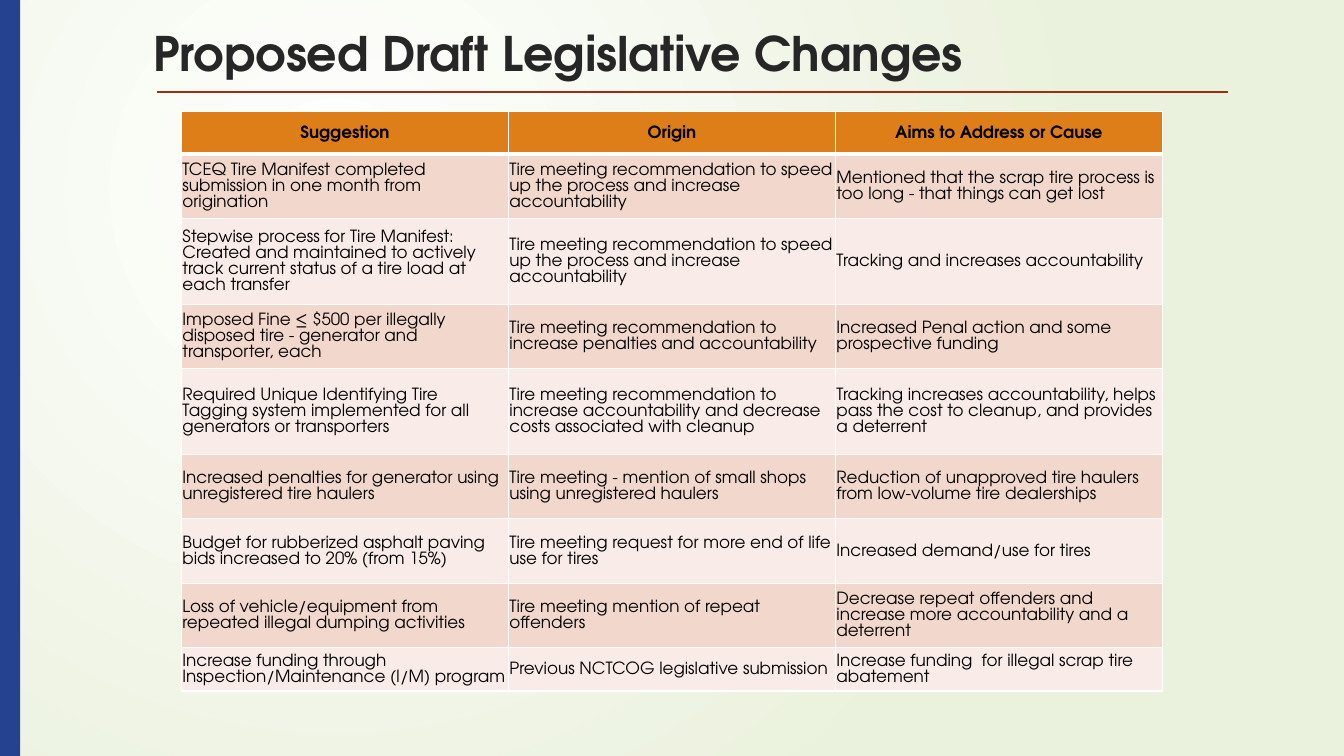
from lxml import etree
from pptx import Presentation
from pptx import util as u
from pptx.dml.color import RGBColor
from pptx.enum import shapes, text
from pptx.oxml.ns import qn

WHITE = RGBColor(0xFF, 0xFF, 0xFF)
PALE_GREEN = RGBColor(0xEA, 0xF1, 0xDC)
BLUE = RGBColor(0x24, 0x42, 0x8F)
RUST = RGBColor(0x9E, 0x2E, 0x0F)
ORANGE = RGBColor(0xDE, 0x7E, 0x18)
BANDS = (RGBColor(0xF2, 0xD8, 0xCC), RGBColor(0xF9, 0xEC, 0xE8))
CHARCOAL = RGBColor(0x26, 0x26, 0x26)
BLACK = RGBColor(0, 0, 0)

SPEED_UP = "Tire meeting recommendation to speed up the process and increase accountability"
HEADINGS = ("Suggestion", "Origin", "Aims to Address or Cause")
CHANGES = [
    ("TCEQ Tire Manifest completed submission in one month from origination",
     SPEED_UP,
     "Mentioned that the scrap tire process is too long - that things can get lost"),
    ("Stepwise process for Tire Manifest: Created and maintained to actively "
     "track current status of a tire load at each transfer",
     SPEED_UP,
     "Tracking and increases accountability"),
    ("Imposed Fine ≤ $500 per illegally disposed tire - generator and transporter, each",
     "Tire meeting recommendation to increase penalties and accountability",
     "Increased Penal action and some prospective funding"),
    ("Required Unique Identifying Tire Tagging system implemented for all "
     "generators or transporters",
     "Tire meeting recommendation to increase accountability and decrease "
     "costs associated with cleanup",
     "Tracking increases accountability, helps pass the cost to cleanup, "
     "and provides a deterrent"),
    ("Increased penalties for generator using unregistered tire haulers",
     "Tire meeting - mention of small shops using unregistered haulers",
     "Reduction of unapproved tire haulers from low-volume tire dealerships"),
    ("Budget for rubberized asphalt paving bids increased to 20% (from 15%)",
     "Tire meeting request for more end of life use for tires",
     "Increased demand/use for tires"),
    ("Loss of vehicle/equipment from repeated illegal dumping activities",
     "Tire meeting mention of repeat offenders",
     "Decrease repeat offenders and increase more accountability and a deterrent"),
    ("Increase funding through Inspection/Maintenance (I/M) program",
     "Previous NCTCOG legislative submission",
     "Increase funding  for illegal scrap tire abatement"),
]
SHORT, TALL = 8.53, 11.33
ROW_HEIGHTS = [5.6, SHORT, TALL, SHORT, TALL, SHORT, SHORT, SHORT, 5.73]


class SlideBuilder:
    """Places elements on a grid of 100 columns by 100 rows."""

    FONT = "TeX Gyre Adventor"

    def __init__(self, deck):
        self.col = deck.slide_width / 100
        self.row = deck.slide_height / 100
        self.slide = deck.slides.add_slide(deck.slide_layouts[6])

    def place(self, x, y, across, down):
        return (u.Emu(round(x * self.col)), u.Emu(round(y * self.row)),
                u.Emu(round(across * self.col)), u.Emu(round(down * self.row)))

    def set_words(self, frame, words, size, color, bold=False):
        frame.word_wrap = True
        frame.text = words
        paragraph = frame.paragraphs[0]
        font = paragraph.runs[0].font
        font.name, font.size, font.bold = self.FONT, u.Pt(size), bold
        font.color.rgb = color
        return paragraph

    def background(self, inner, outer):
        """Radial gradient centred in the upper left quarter."""
        fill = self.slide.background.fill
        fill.gradient()
        for stop, color, position in zip(fill.gradient_stops, (inner, outer), (0, 1)):
            stop.color.rgb, stop.position = color, position
        gradient = self.slide.element.find(".//" + qn("a:gradFill"))
        gradient.remove(gradient.find(qn("a:lin")))
        circle = etree.SubElement(gradient, qn("a:path"), path="circle")
        etree.SubElement(circle, qn("a:fillToRect"),
                         l="50000", t="50000", r="100000", b="100000")

    def bar(self, x, y, across, down, color):
        bar = self.slide.shapes.add_shape(
            shapes.MSO_SHAPE.RECTANGLE, *self.place(x, y, across, down))
        bar.shadow.inherit = False
        bar.fill.solid()
        bar.fill.fore_color.rgb = color
        bar.line.fill.background()

    def title(self, x, y, across, down, words):
        box = self.slide.shapes.add_textbox(*self.place(x, y, across, down))
        box.text_frame.vertical_anchor = text.MSO_ANCHOR.TOP
        self.set_words(box.text_frame, words, 34, CHARCOAL, bold=True)

    def rule(self, x, y, across, color):
        left, top, width, _ = self.place(x, y, across, 0)
        rule = self.slide.shapes.add_connector(
            shapes.MSO_CONNECTOR.STRAIGHT, left, top, left + width, top)
        rule.line.color.rgb, rule.line.width = color, u.Pt(1.5)
        etree.SubElement(rule._element.spPr, qn("a:effectLst"))

    def borders(self, cell, top, bottom):
        """White cell edges; top and bottom are widths in points."""
        properties = cell._tc.get_or_add_tcPr()
        edges = {"lnL": 1, "lnR": 1, "lnT": top, "lnB": bottom}
        for place, (edge, width) in enumerate(edges.items()):
            line = etree.Element(qn("a:" + edge), w=str(int(u.Pt(width))))
            solid = etree.SubElement(line, qn("a:solidFill"))
            etree.SubElement(solid, qn("a:srgbClr"), val=str(WHITE))
            properties.insert(place, line)

    def cell(self, cell, words, fill, heading):
        cell.fill.solid()
        cell.fill.fore_color.rgb = fill
        cell.vertical_anchor = text.MSO_ANCHOR.MIDDLE
        cell.margin_left = cell.margin_right = cell.margin_top = u.Inches(0.01)
        cell.margin_bottom = 0
        paragraph = self.set_words(cell.text_frame, words, 12, BLACK, bold=heading)
        paragraph.line_spacing = u.Pt(11.4)
        paragraph.alignment = text.PP_ALIGN.CENTER if heading else text.PP_ALIGN.LEFT

    def table(self, x, y, across, heights, rows):
        table = self.slide.shapes.add_table(
            len(rows), len(rows[0]), *self.place(x, y, across, sum(heights))).table
        for column in table.columns:
            column.width = u.Emu(round(across * self.col / len(rows[0])))
        for r, (height, row) in enumerate(zip(heights, rows)):
            table.rows[r].height = u.Emu(round(height * self.row))
            fill = BANDS[(r - 1) % 2] if r else ORANGE
            for c, words in enumerate(row):
                self.cell(table.cell(r, c), words, fill, heading=r == 0)
                self.borders(table.cell(r, c), top=3 if r == 1 else 1,
                             bottom=3 if r == 0 else 1)


def main():
    deck = Presentation()
    deck.slide_width, deck.slide_height = u.Inches(13.33), u.Inches(7.5)
    slide = SlideBuilder(deck)
    slide.background(WHITE, PALE_GREEN)
    slide.bar(0, 0, 1.5, 100, BLUE)
    slide.title(10.65, 2.5, 87.6, 19.3, "Proposed Draft Legislative Changes")
    slide.rule(11.7, 12.13, 79.67, RUST)
    slide.table(13.5, 14.8, 73, ROW_HEIGHTS, [HEADINGS, *CHANGES])
    deck.save("out.pptx")


if __name__ == "__main__":
    main()
